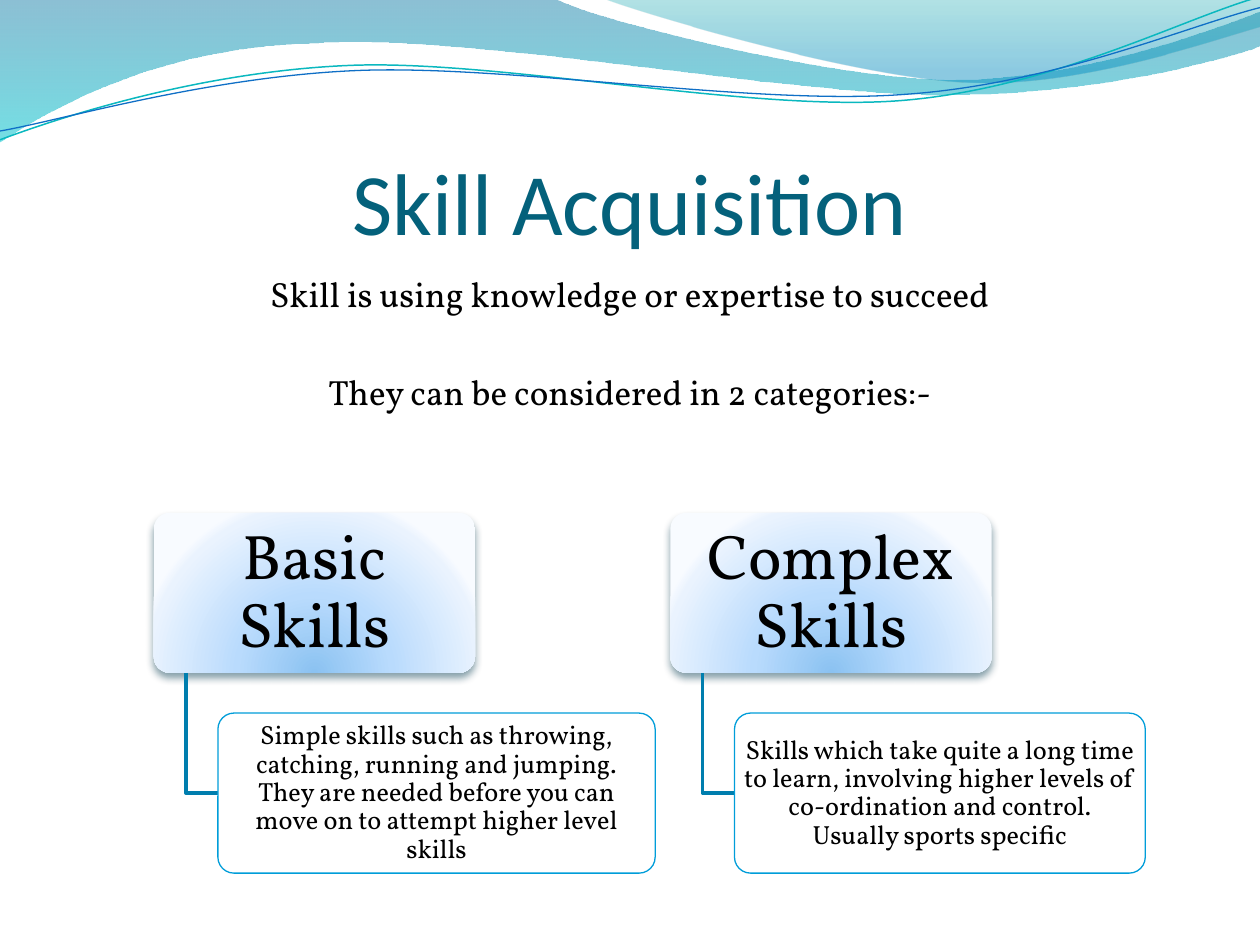
import math

from lxml import etree
from pptx import Presentation
from pptx import util as u
from pptx.dml.color import RGBColor
from pptx.enum import shapes, text
from pptx.oxml import ns

BODY_FONT = "Vollkorn"
TEAL_BAND = [(0, "0074A1", 45), (100, "00C6CF", 55)]
CORNER_BAND = [(0, "00A1A9", 30), (80, "008BBF", 45)]
NODE_GLOW = [(0, "8BC2F1", 100), (43, "B9DBFD", 100),
             (93, "EAF3FE", 100), (100, "F8FBFF", 100)]
DOWNWARD = {"lin": {"ang": "5400000", "scaled": "0"}}
FROM_BELOW = {"path": {"path": "circle"},
              "fillToRect": {"l": "50000", "t": "130000", "r": "50000", "b": "-30000"}}


def color(hex_text):
    return RGBColor.from_string(hex_text)


def add_node(parent, tag, **attributes):
    return etree.SubElement(parent, ns.qn("a:" + tag), attributes)


def add_color(parent, hex_text, alpha):
    node = add_node(parent, "srgbClr", val=hex_text)
    if alpha < 100:
        add_node(node, "alpha", val=str(alpha * 1000))


def set_gradient(shape, stops, direction):
    """Fill with (position, colour, opacity) stops; direction is nested XML."""
    shape.fill.solid()
    solid = shape._element.spPr.find(ns.qn("a:solidFill"))
    gradient = etree.Element(ns.qn("a:gradFill"), rotWithShape="1")
    stop_list = add_node(gradient, "gsLst")
    for position, hex_text, alpha in stops:
        add_color(add_node(stop_list, "gs", pos=str(position * 1000)), hex_text, alpha)
    parent = gradient
    for tag, attributes in direction.items():
        parent = add_node(parent, tag, **attributes)
    solid.getparent().replace(solid, gradient)


def set_line(shape, hex_text=None, width=1):
    if hex_text is None:
        shape.line.fill.background()
    else:
        shape.line.color.rgb = color(hex_text)
        shape.line.width = u.Pt(width)


def add_outline(slide, box, start, segments, close=False, tilt=0):
    """Draw segments in a box: two numbers are a line, six a Bezier curve."""
    left, top, width, height = box
    builder = slide.shapes.build_freeform(u.Inches(left), u.Inches(top))
    builder.add_line_segments([(u.Inches(left + width), u.Inches(top + height))], close=False)
    outline = builder.convert_to_shape()
    outline.shadow.inherit = False
    outline.fill.background()
    outline.rotation = -tilt % 360
    center_x, center_y = left + width / 2, top + height / 2
    cos, sin = math.cos(math.radians(tilt)), math.sin(math.radians(tilt))
    track = outline._element.spPr.find(".//" + ns.qn("a:path"))
    for child in list(track):
        track.remove(child)
    for segment in [start, *segments]:
        tag = "moveTo" if segment is start else "lnTo" if len(segment) == 2 else "cubicBezTo"
        step = add_node(track, tag)
        for x, y in zip(segment[::2], segment[1::2]):
            dx, dy = x - center_x, y - center_y
            add_node(step, "pt", x=str(u.Inches(dx * cos - dy * sin + width / 2)),
                     y=str(u.Inches(dx * sin + dy * cos + height / 2)))
    if close:
        add_node(track, "close")
    return outline


def write(shape, paragraphs, frame_format, font_format, hex_text="000000", line_spacing=None):
    frame = shape.text_frame
    frame.word_wrap = True
    for name, value in frame_format.items():
        setattr(frame, name, value)
    for index, (wording, space_before) in enumerate(paragraphs):
        paragraph = frame.paragraphs[0] if index == 0 else frame.add_paragraph()
        paragraph.alignment = text.PP_ALIGN.CENTER
        paragraph.space_before = u.Pt(space_before)
        paragraph.line_spacing = line_spacing
        run = paragraph.add_run()
        run.text = wording
        for name, value in font_format.items():
            setattr(run.font, name, value)
        run.font.color.rgb = color(hex_text)


def add_waves(slide):
    # Tinted bands
    bands = [
        ((-0.01, -0.01, 10.02, 1.14), (0, 0),
         [(4.4, -0.01), (4.76, 0.17, 6.64, 0.63, 7.58, 0.63),
          (8.53, 0.63, 9.58, 0.26, 10, 0.09), (10.01, 0.36),
          (9.83, 0.44, 8.7, 0.76, 7.46, 0.75), (6.22, 0.75, 3.82, 0.28, 2.57, 0.34),
          (1.29, 0.36, 0.46, 0.83, -0.01, 1.13), (0, 0)], TEAL_BAND),
        ((4.79, -0.01, 5.21, 0.7), (4.79, -0.01),
         [(5.09, 0.11, 6.82, 0.62, 7.69, 0.65), (8.56, 0.69, 9.61, 0.32, 10, 0.21),
          (10, 0), (4.79, -0.01)], CORNER_BAND),
    ]
    for box, start, segments, stops in bands:
        band = add_outline(slide, box, start, segments, close=True)
        set_gradient(band, stops, DOWNWARD)
        set_line(band)
    # Thin wave lines
    waves = [
        ((-0.02, 0.22, 10.02, 0.71), (0, 1.11),
         [(0.48, 0.93, 1.58, 0.57, 2.77, 0.52), (3.95, 0.47, 5.93, 0.89, 7.13, 0.8),
          (8.33, 0.71, 9.38, 0.15, 9.98, -0.02)], "0AB8BF", 0.85),
        ((-0.02, 0.3, 10.03, 0.58), (0, 1.04),
         [(0.47, 0.96, 1.64, 0.61, 2.83, 0.56), (4.03, 0.51, 5.97, 0.84, 7.17, 0.75),
          (8.36, 0.67, 9.41, 0.21, 10, 0.06)], "0F6FC6", 0.75),
    ]
    for box, start, segments, hex_text, width in waves:
        set_line(add_outline(slide, box, start, segments, tilt=2.7), hex_text, width)


def add_text(slide, box, paragraphs, anchor, margins, font, size, hex_text):
    holder = slide.shapes.add_textbox(*map(u.Inches, box))
    side, top, bottom = map(u.Inches, margins)
    write(holder, paragraphs,
          {"vertical_anchor": anchor, "margin_left": side, "margin_right": side,
           "margin_top": top, "margin_bottom": bottom},
          {"name": font, "size": u.Pt(size)}, hex_text)


def add_card(slide, box, wording, size, margin):
    card = slide.shapes.add_shape(shapes.MSO_SHAPE.ROUNDED_RECTANGLE, *map(u.Inches, box))
    card.adjustments[0] = 0.1
    card.shadow.inherit = False
    side, edge = u.Inches(margin), u.Inches(0.02)
    write(card, [(wording, 0)],
          {"vertical_anchor": text.MSO_ANCHOR.MIDDLE, "margin_left": side,
           "margin_right": side, "margin_top": edge, "margin_bottom": edge},
          {"name": BODY_FONT, "size": u.Pt(size)}, line_spacing=0.9)
    return card


def add_category(slide, left, top, heading, detail, detail_width):
    width, height, gap = 2.55, 1.27, 0.32
    detail_left, detail_top = left + 0.2 * width, top + height + gap
    # Heading card with glow and shadow
    heading_card = add_card(slide, (left, top, width, height), heading, 36, 0.07)
    set_gradient(heading_card, NODE_GLOW, FROM_BELOW)
    set_line(heading_card)
    effects = heading_card._element.spPr.find(ns.qn("a:effectLst"))
    shadow = add_node(effects, "outerShdw", blurRad=str(u.Pt(4.5)), dist=str(u.Pt(3)),
                      dir="5400000", rotWithShape="0")
    add_color(shadow, "00374C", 48)
    # Elbow from heading to detail
    stem, bottom, middle = left + 0.1 * width, top + height, detail_top + height / 2
    elbow = add_outline(slide, (stem, bottom, detail_left - stem, middle - bottom),
                        (stem, bottom), [(stem, middle), (detail_left, middle)])
    set_line(elbow, "007EAE", 2)
    # Detail card
    detail_card = add_card(slide, (detail_left, detail_top, detail_width, height),
                           detail, 15, 0.03)
    detail_card.fill.solid()
    detail_card.fill.fore_color.rgb = color("FFFFFF")
    white = detail_card._element.spPr.find(ns.qn("a:solidFill"))[0]
    add_node(white, "alpha", val="90000")
    set_line(detail_card, "009DD9", 0.75)


def main():
    deck = Presentation()
    deck.slide_width, deck.slide_height = u.Inches(10), u.Inches(7.5)
    slide = deck.slides.add_slide(deck.slide_layouts[6])
    add_waves(slide)
    add_text(slide, (0.2, 0.76, 9.6, 1.25), [("Skill Acquisition", 0)],
             text.MSO_ANCHOR.BOTTOM, (0, 0.05, 0), "Calibri", 50, "04617B")
    add_text(slide, (0.5, 2.11, 9, 4.8),
             [("Skill is using knowledge or expertise to succeed", 4),
              ("They can be considered in 2 categories:-", 32)],
             text.MSO_ANCHOR.TOP, (0.1, 0.05, 0.05), BODY_FONT, 20, "000000")
    categories = [
        (1.22, "Basic Skills", "Simple skills such as throwing, catching, running and jumping. "
         "They are needed before you can move on to attempt higher level skills", 3.47),
        (5.32, "Complex Skills", "Skills which take quite a long time to learn, involving "
         "higher levels of co-ordination and control. Usually sports specific", 3.26),
    ]
    for left, heading, detail, detail_width in categories:
        add_category(slide, left, 4.07, heading, detail, detail_width)
    deck.save("out.pptx")


if __name__ == "__main__":
    main()
